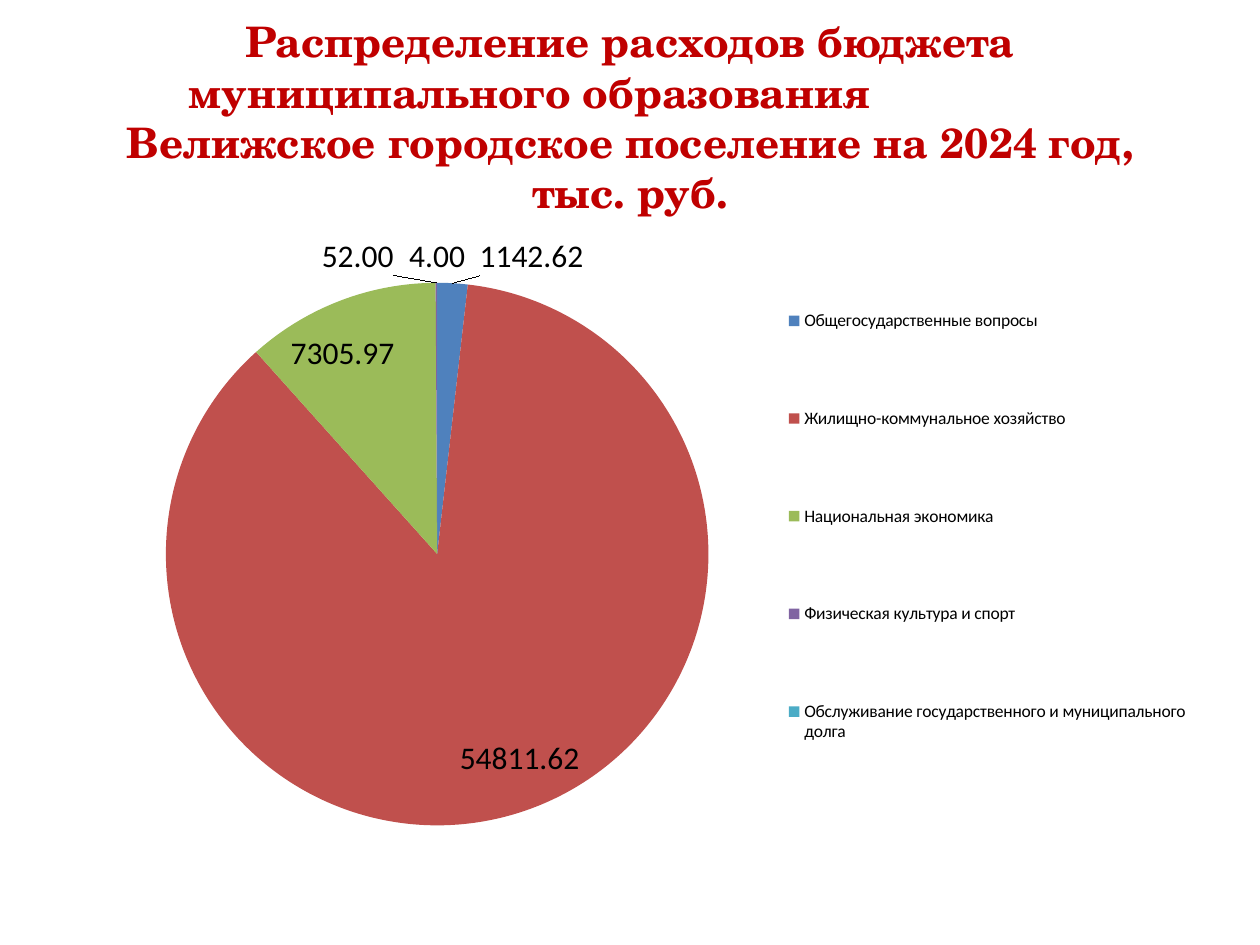
import dataclasses

import pptx
import pptx.chart.data
import pptx.dml.color
import pptx.enum.chart
import pptx.enum.text
import pptx.oxml
import pptx.oxml.ns
import pptx.util


@dataclasses.dataclass(frozen=True)
class Theme:
    title_font: str = "TeX Gyre Schola"
    chart_font: str = "Calibri"
    title_size: int = 24
    label_size: int = 18
    legend_size: int = 10
    title_color: str = "C00000"
    text_color: str = "000000"


theme = Theme()


def style_font(font, name, size, color, bold=False):
    font.name = name
    font.size = pptx.util.Pt(size)
    font.bold = bold
    font.color.rgb = pptx.dml.color.RGBColor.from_string(color)


def write_line(paragraph, text, *, indent=None, **font_format):
    """Add formatted text, centred unless a left indent is given."""
    run = paragraph.add_run()
    run.text = text
    style_font(run.font, **font_format)
    alignments = pptx.enum.text.PP_ALIGN
    paragraph.alignment = alignments.CENTER if indent is None else alignments.LEFT
    if indent is not None:
        properties = paragraph._p.get_or_add_pPr()
        properties.set("marL", str(int(indent)))
        properties.set("indent", "0")


presentation = pptx.Presentation()
presentation.slide_width = pptx.util.Inches(10)
presentation.slide_height = pptx.util.Inches(7.5)
slide = presentation.slides.add_slide(presentation.slide_layouts[6])
width, height = presentation.slide_width, presentation.slide_height
left, content_width = int(width * 0.05), int(width * 0.9)

# Title: the second line is set off to the left
title_lines = [
    ("Распределение расходов бюджета", None),
    ("муниципального образования", int(width * 0.09)),
    ("Велижское городское поселение на 2024 год,", None),
    ("тыс. руб.", None),
]
title = slide.shapes.add_textbox(left, int(height * 0.04), content_width, int(height / 6))
title_frame = title.text_frame
title_frame.word_wrap = True
title_frame.vertical_anchor = pptx.enum.text.MSO_ANCHOR.MIDDLE
for number, (text, indent) in enumerate(title_lines):
    paragraph = title_frame.add_paragraph() if number else title_frame.paragraphs[0]
    write_line(paragraph, text, indent=indent, name=theme.title_font,
               size=theme.title_size, color=theme.title_color, bold=True)

# Budget spending: category, value, colour
spending = [
    ("Общегосударственные вопросы", 1142.62, "4F81BD"),
    ("Жилищно-коммунальное хозяйство", 54811.62, "C0504D"),
    ("Национальная экономика", 7305.97, "9BBB59"),
    ("Физическая культура и спорт", 52, "8064A2"),
    ("Обслуживание государственного и муниципального долга", 4, "4BACC6"),
]
categories, values, colors = zip(*spending)
chart_data = pptx.chart.data.CategoryChartData(number_format="0.00")
chart_data.categories = categories
chart_data.add_series("Series 1", values)
chart = slide.shapes.add_chart(
    pptx.enum.chart.XL_CHART_TYPE.PIE, left, int(height * 7 / 30),
    content_width, int(height * 0.66), chart_data).chart
chart.has_title = False
style_font(chart.font, theme.chart_font, theme.label_size, theme.text_color)

# Slices
plot = chart.plots[0]
plot.vary_by_categories = True
for number, color in enumerate(colors):
    fill = plot.series[0].points[number].format.fill
    fill.solid()
    fill.fore_color.rgb = pptx.dml.color.RGBColor.from_string(color)

# Value labels
plot.has_data_labels = True
labels = plot.data_labels
labels.show_value = True
labels.show_percentage = False
labels.number_format = "0.00"
labels.number_format_is_linked = False
labels.position = pptx.enum.chart.XL_LABEL_POSITION.BEST_FIT
style_font(labels.font, theme.chart_font, theme.label_size, theme.text_color)
leader_lines = labels._element.find(pptx.oxml.ns.qn("c:showLeaderLines"))
if leader_lines is None:
    leader_lines = pptx.oxml.parse_xml(
        f'<c:showLeaderLines {pptx.oxml.ns.nsdecls("c")}/>')
    labels._element.append(leader_lines)
leader_lines.set("val", "1")

# Legend
chart.has_legend = True
legend = chart.legend
legend.position = pptx.enum.chart.XL_LEGEND_POSITION.RIGHT
legend.include_in_layout = False
style_font(legend.font, theme.chart_font, theme.legend_size, theme.text_color)

# Pie and legend areas, as shares of the chart: left, top, width, height
namespace = pptx.oxml.ns.nsdecls("c")
areas = [
    (chart._chartSpace.chart.plotArea, '<c:layoutTarget val="inner"/>',
     (0.09, 0.1, 0.48, 0.87)),
    (legend._element, "", (0.63, 0.02, 0.37, 0.94)),
]
for element, target, shares in areas:
    for old_layout in element.findall(pptx.oxml.ns.qn("c:layout")):
        element.remove(old_layout)
    modes = "".join(f'<c:{axis}Mode val="edge"/>' for axis in "xy")
    sizes = "".join(f'<c:{side} val="{share}"/>' for side, share in zip("xywh", shares))
    layout = pptx.oxml.parse_xml(
        f"<c:layout {namespace}><c:manualLayout>{target}{modes}{sizes}"
        "</c:manualLayout></c:layout>")
    legend_position = element.find(pptx.oxml.ns.qn("c:legendPos"))
    if legend_position is None:
        element.insert(0, layout)
    else:
        legend_position.addnext(layout)

presentation.save("out.pptx")
